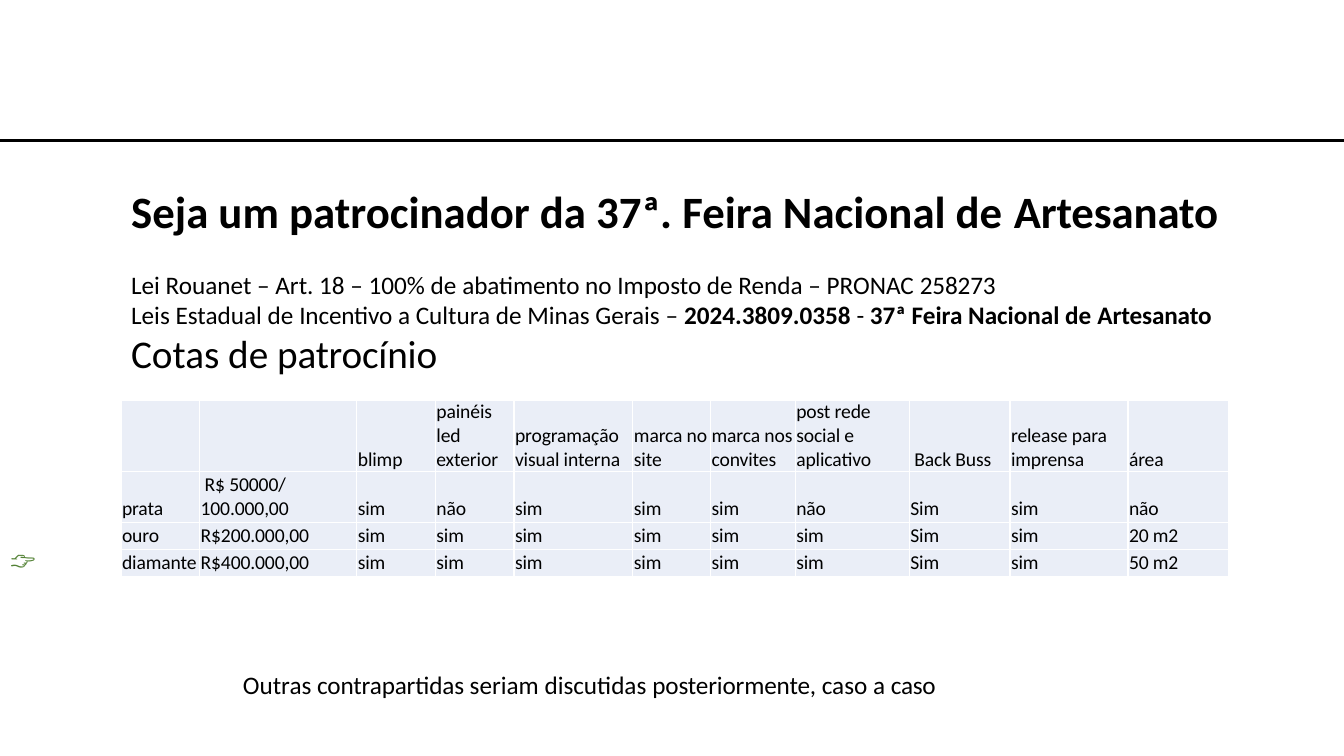
"""Build the sponsor quota slide for the 37th national craft fair."""
from dataclasses import dataclass
from typing import NamedTuple

from lxml.etree import SubElement
from pptx import Presentation
from pptx.dml.color import RGBColor
from pptx.enum.shapes import MSO_CONNECTOR
from pptx.enum.text import MSO_ANCHOR
from pptx.oxml.ns import qn
from pptx.util import Inches, Pt


@dataclass(frozen=True)
class Theme:
    ink: str = "000000"
    paper: str = "FFFFFF"
    tint: str = "EAEEF7"
    green: str = "538235"
    face: str = "Calibri"
    icon: str = "Cabin"
    title: float = 32
    head: float = 28
    body: float = 18
    small: float = 14
    rule: float = 2.16
    edge: float = 1


class Run(NamedTuple):
    text: str
    track: float = 0
    bold: bool = False


class Line(NamedTuple):
    runs: list[Run]
    size: float
    pitch: float | None = None
    face: str = "Calibri"
    tone: str = "000000"


class Block(NamedTuple):
    left: float
    top: float
    width: float
    height: float
    lines: list[Line]


LOOK = Theme()
WIDTH, HEIGHT = Inches(13.33), Inches(7.5)
PAD = 0.08

BLOCKS = [
    Block(0.68, 71.73, 2.1, 4.4,
          [Line([Run("👉", -0.5)], LOOK.body, face=LOOK.icon, tone=LOOK.green)]),
    Block(9.68, 24, 81.1, 7.47, [Line([
        Run("Seja um patrocinador da 37ª. Feira Nacional de ", 0, True),
        Run("Artesanato", -0.1, True)], LOOK.title)]),
    Block(9.68, 35.33, 81.1, 14.53, [
        Line([Run("Lei Rouanet – Art. 18 – 100% de "), Run("abatimento ", -0.1),
              Run("no Imposto de Renda – PRONAC "), Run("258273", -0.1)], LOOK.body),
        Line([Run("Leis Estadual de "), Run("Incentivo ", -0.1),
              Run("a Cultura de Minas Gerais – "),
              Run("2024.3809.0358 ", 0, True), Run("- "),
              Run("37ª Feira Nacional de ", 0, True),
              Run("Artesanato", -0.1, True)], LOOK.body, 21.3),
        Line([Run("Cotas de "), Run("patrocínio", -0.1)], LOOK.head, 33.3)]),
    Block(18, 88.27, 52.2, 4.4, [Line([
        Run("Outras "), Run("contrapartidas ", -0.1), Run("seriam discutidas "),
        Run("posteriormente, ", -0.1), Run("caso a "), Run("caso", -0.2)],
        LOOK.body)]),
]

COLS = [5.85, 11.7, 5.85, 5.85, 8.85, 5.78, 6.3, 8.48, 7.5, 8.78, 7.5]
ROWS = [9.47, 6.67, 3.6, 3.6]
QUOTAS = [
    ["", "", "blimp", "painéis led exterior", "programação visual interna",
     "marca no site", "marca nos convites", "post rede social e aplicativo",
     "Back Buss", "release para imprensa", "área"],
    ["prata", "R$ 50000/ 100.000,00", "sim", "não", "sim", "sim", "sim", "não",
     "Sim", "sim", "não"],
    ["ouro", "R$200.000,00", "sim", "sim", "sim", "sim", "sim", "sim",
     "Sim", "sim", "20 m2"],
    ["diamante", "R$400.000,00", "sim", "sim", "sim", "sim", "sim", "sim",
     "Sim", "sim", "50 m2"],
]
PADS = {(0, 8): 0.38}
DENTS = {(1, 1): 0.3}


def across(share: float) -> int:
    """Turn a percent of the slide width into a length."""
    return int(WIDTH * share / 100)


def down(share: float) -> int:
    """Turn a percent of the slide height into a length."""
    return int(HEIGHT * share / 100)


def write(para, line: Line) -> None:
    """Add the runs of one line to a paragraph."""
    if line.pitch:
        para.line_spacing = Pt(line.pitch)
    for item in line.runs:
        run = para.add_run()
        run.text = item.text
        font = run.font
        font.name, font.size, font.bold = line.face, Pt(line.size), item.bold
        font.color.rgb = RGBColor.from_string(line.tone)
        if item.track:
            font._element.set("spc", str(round(item.track * 100)))


def add_block(slide, block: Block) -> None:
    """Draw one text block."""
    shape = slide.shapes.add_textbox(across(block.left), down(block.top),
                                     across(block.width), down(block.height))
    frame = shape.text_frame
    frame.word_wrap = True
    frame.margin_left = across(PAD)
    frame.margin_top = down(0.3)
    frame.margin_right = frame.margin_bottom = 0
    for spot, line in enumerate(block.lines):
        write(frame.add_paragraph() if spot else frame.paragraphs[0], line)


def edge_cell(cell) -> None:
    """Give a cell its four borders."""
    props = cell._tc.get_or_add_tcPr()
    for side in ("lnL", "lnR", "lnT", "lnB"):
        edge = SubElement(props, qn(f"a:{side}"), w=str(Pt(LOOK.edge)))
        fill = SubElement(edge, qn("a:solidFill"))
        SubElement(fill, qn("a:srgbClr"), val=LOOK.paper)


def add_grid(slide) -> None:
    """Draw the table of quotas."""
    table = slide.shapes.add_table(
        len(ROWS), len(COLS), across(9), down(52.93),
        across(sum(COLS)), down(sum(ROWS))).table
    table.first_row = table.horz_banding = False
    for col, share in zip(table.columns, COLS):
        col.width = across(share)
    for row, share in zip(table.rows, ROWS):
        row.height = down(share)
    for y, words in enumerate(QUOTAS):
        for x, text in enumerate(words):
            cell = table.cell(y, x)
            edge_cell(cell)
            cell.fill.solid()
            cell.fill.fore_color.rgb = RGBColor.from_string(LOOK.tint)
            cell.vertical_anchor = MSO_ANCHOR.BOTTOM
            cell.margin_left = across(PADS.get((y, x), PAD))
            cell.margin_top = cell.margin_right = 0
            cell.margin_bottom = down(0.2) if y else 0
            para = cell.text_frame.paragraphs[0]
            if (y, x) in DENTS:
                para._p.get_or_add_pPr().set("indent", str(across(DENTS[y, x])))
            if text:
                write(para, Line([Run(text, -0.1)], LOOK.small))


def add_rule(slide) -> None:
    """Draw the rule across the top."""
    rule = slide.shapes.add_connector(MSO_CONNECTOR.STRAIGHT,
                                      0, down(18.63), WIDTH, down(18.63))
    rule.line.color.rgb = RGBColor.from_string(LOOK.ink)
    rule.line.width = Pt(LOOK.rule)
    SubElement(rule._element.spPr, qn("a:effectLst"))


def main() -> None:
    """Build and save the slide."""
    deck = Presentation()
    deck.slide_width, deck.slide_height = WIDTH, HEIGHT
    slide = deck.slides.add_slide(deck.slide_layouts[6])
    add_rule(slide)
    for block in BLOCKS[:-1]:
        add_block(slide, block)
    add_grid(slide)
    add_block(slide, BLOCKS[-1])
    deck.save("out.pptx")


if __name__ == "__main__":
    main()
